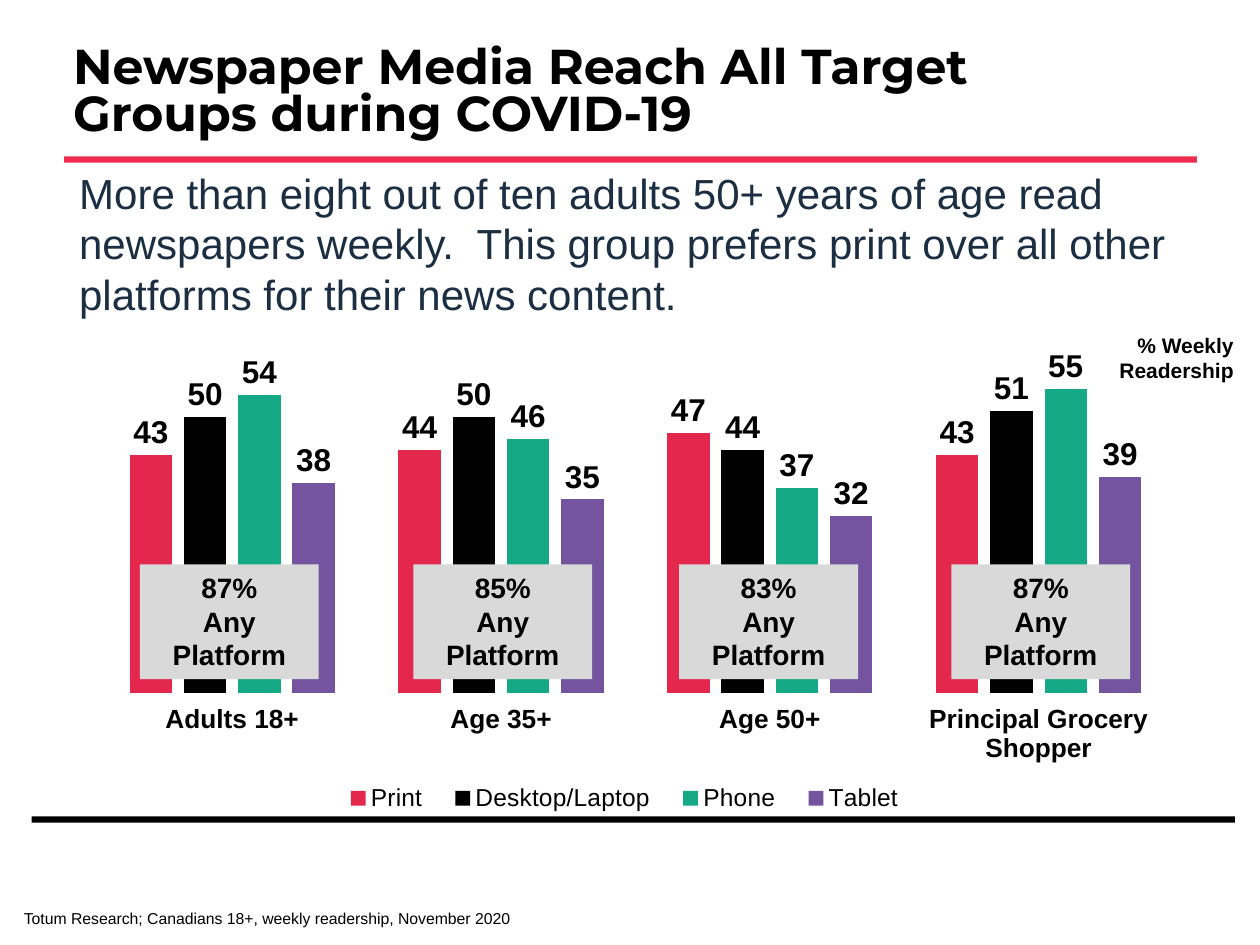
from dataclasses import dataclass

from lxml.etree import SubElement
from pptx import Presentation
from pptx.chart.data import CategoryChartData
from pptx.dml.color import RGBColor
from pptx.enum.chart import XL_CHART_TYPE as ChartType
from pptx.enum.chart import XL_LABEL_POSITION as LabelPosition
from pptx.enum.chart import XL_LEGEND_POSITION as LegendPosition
from pptx.enum.shapes import MSO_SHAPE as Preset
from pptx.enum.text import MSO_ANCHOR as Anchor
from pptx.enum.text import PP_ALIGN as Align
from pptx.oxml.ns import qn
from pptx.util import Inches, Pt

CELL = 0.1  # inches per grid column and row
COLUMNS, ROWS = 100, 75


@dataclass(frozen=True)
class Theme:
    heading_font: str = "Montserrat"
    body_font: str = "Arial"
    ink: str = "000000"
    statement: str = "1C2F42"
    accent: str = "F02C51"
    panel: str = "D9D9D9"
    title_size: int = 28
    statement_size: int = 24
    value_size: int = 18
    reach_size: int = 16
    category_size: int = 15
    legend_size: int = 14
    unit_size: int = 12
    source_size: int = 9


@dataclass(frozen=True)
class Area:
    """A place on the slide grid, in columns and rows."""
    column: float
    row: float
    columns: float
    rows: float

    def lengths(self) -> tuple:
        cells = (self.column, self.row, self.columns, self.rows)
        return tuple(Inches(count * CELL) for count in cells)


@dataclass(frozen=True)
class Platform:
    name: str
    color: str
    readership: tuple


@dataclass(frozen=True)
class Audience:
    name: str
    reach: str
    panel_column: float


THEME = Theme()
PLATFORMS = (
    Platform("Print", "E4284D", (43, 44, 47, 43)),
    Platform("Desktop/Laptop", THEME.ink, (50, 50, 44, 51)),
    Platform("Phone", "16A985", (54, 46, 37, 55)),
    Platform("Tablet", "74539F", (38, 35, 32, 39)),
)
AUDIENCES = (
    Audience("Adults 18+", "87%", 11.1),
    Audience("Age 35+", "85%", 32.8),
    Audience("Age 50+", "83%", 53.9),
    Audience("Principal Grocery Shopper", "87%", 75.5),
)


def style_font(font, size: int, color: str = THEME.ink, bold: bool = False,
               name: str = THEME.body_font) -> None:
    font.name, font.size, font.bold = name, Pt(size), bold
    font.color.rgb = RGBColor.from_string(color)


def write(shape, *lines: str, align=Align.LEFT, anchor=Anchor.TOP,
          spacing: float = 1.0, **font_format) -> None:
    frame = shape.text_frame
    frame.word_wrap = True
    frame.vertical_anchor = anchor
    frame.text = "\n".join(lines)
    for paragraph in frame.paragraphs:
        paragraph.alignment = align
        paragraph.line_spacing = spacing
        style_font(paragraph.font, **font_format)


def add_block(slide, area: Area, color: str):
    block = slide.shapes.add_shape(Preset.RECTANGLE, *area.lengths())
    block.shadow.inherit = False
    block.fill.solid()
    block.fill.fore_color.rgb = RGBColor.from_string(color)
    block.line.fill.background()
    return block


def add_text(slide, area: Area, text: str, **text_format) -> None:
    write(slide.shapes.add_textbox(*area.lengths()), text, **text_format)


def set_title(slide, area: Area, text: str) -> None:
    title = slide.shapes.title
    title.left, title.top, title.width, title.height = area.lengths()
    frame = title.text_frame
    frame.margin_left = frame.margin_right = Inches(0.07)
    frame.margin_top = frame.margin_bottom = Inches(0.04)
    write(title, text, anchor=Anchor.MIDDLE, spacing=0.8, bold=True,
          size=THEME.title_size, name=THEME.heading_font)


def place_part(part, position: int, **settings) -> None:
    """Fix a chart part's place in shares of the chart; position is the layout's rank."""
    for old_layout in part.findall(qn("c:layout")):
        part.remove(old_layout)
    layout = SubElement(part, qn("c:layout"))
    part.insert(position, layout)
    manual = SubElement(layout, qn("c:manualLayout"))
    for tag, value in settings.items():
        SubElement(manual, qn(f"c:{tag}")).set("val", str(value))


def add_readership_chart(slide, area: Area) -> None:
    data = CategoryChartData()
    data.categories = [audience.name for audience in AUDIENCES]
    for platform in PLATFORMS:
        data.add_series(platform.name, platform.readership)
    chart = slide.shapes.add_chart(
        ChartType.COLUMN_CLUSTERED, *area.lengths(), data).chart
    chart.has_title = False
    style_font(chart.font, THEME.value_size)

    chart.has_legend = True
    chart.legend.position = LegendPosition.BOTTOM
    chart.legend.include_in_layout = False
    style_font(chart.legend.font, THEME.legend_size)

    chart_parts = chart._chartSpace.chart
    place_part(chart_parts.plotArea, 0, layoutTarget="inner",
               xMode="edge", yMode="edge", x=0.01, y=0.17, w=0.99, h=0.58)
    place_part(chart_parts.find(qn("c:legend")), 1,
               xMode="edge", yMode="edge", x=0.22, y=0.91, w=0.55, h=0.05)

    value_axis, category_axis = chart.value_axis, chart.category_axis
    value_axis.minimum_scale, value_axis.maximum_scale = 0, 60
    value_axis.has_major_gridlines = False
    value_axis.visible = False
    category_axis.format.line.fill.background()
    style_font(category_axis.tick_labels.font, THEME.category_size, bold=True)

    plot = chart.plots[0]
    plot.gap_width, plot.overlap = 150, -28
    plot.vary_by_categories = False
    for series, platform in zip(plot.series, PLATFORMS):
        series.format.fill.solid()
        series.format.fill.fore_color.rgb = RGBColor.from_string(platform.color)
        labels = series.data_labels
        labels.show_value = True
        labels.position = LabelPosition.OUTSIDE_END
        style_font(labels.font, THEME.value_size, bold=True)


def main() -> None:
    presentation = Presentation()
    presentation.slide_width = Inches(COLUMNS * CELL)
    presentation.slide_height = Inches(ROWS * CELL)
    slide = presentation.slides.add_slide(presentation.slide_layouts[5])

    add_block(slide, Area(2.5, 64.8, 95.5, 0.5), THEME.ink)
    add_block(slide, Area(5.1, 12.4, 89.9, 0.5), THEME.accent)
    set_title(slide, Area(5.1, 0.2, 86.2, 14.5),
              "Newspaper Media Reach All Target Groups during COVID-19")
    add_readership_chart(slide, Area(6.9, 21, 86.2, 45.3))
    add_text(slide, Area(5.3, 12.8, 89.5, 13.1),
             "More than eight out of ten adults 50+ years of age read newspapers "
             "weekly.  This group prefers print over all other platforms for "
             "their news content.",
             size=THEME.statement_size, color=THEME.statement)
    add_text(slide, Area(0.9, 71.3, 60.1, 2.7),
             "Totum Research; Canadians 18+, weekly readership, November 2020",
             size=THEME.source_size, spacing=1.2)
    for audience in AUDIENCES:
        panel = add_block(slide, Area(audience.panel_column, 44.8, 14.2, 9.1), THEME.panel)
        write(panel, audience.reach, "Any Platform", align=Align.CENTER,
              size=THEME.reach_size, bold=True)
    add_text(slide, Area(85.4, 25.9, 13.5, 5), "% Weekly Readership",
             align=Align.RIGHT, size=THEME.unit_size, bold=True)
    presentation.save("out.pptx")


if __name__ == "__main__":
    main()
